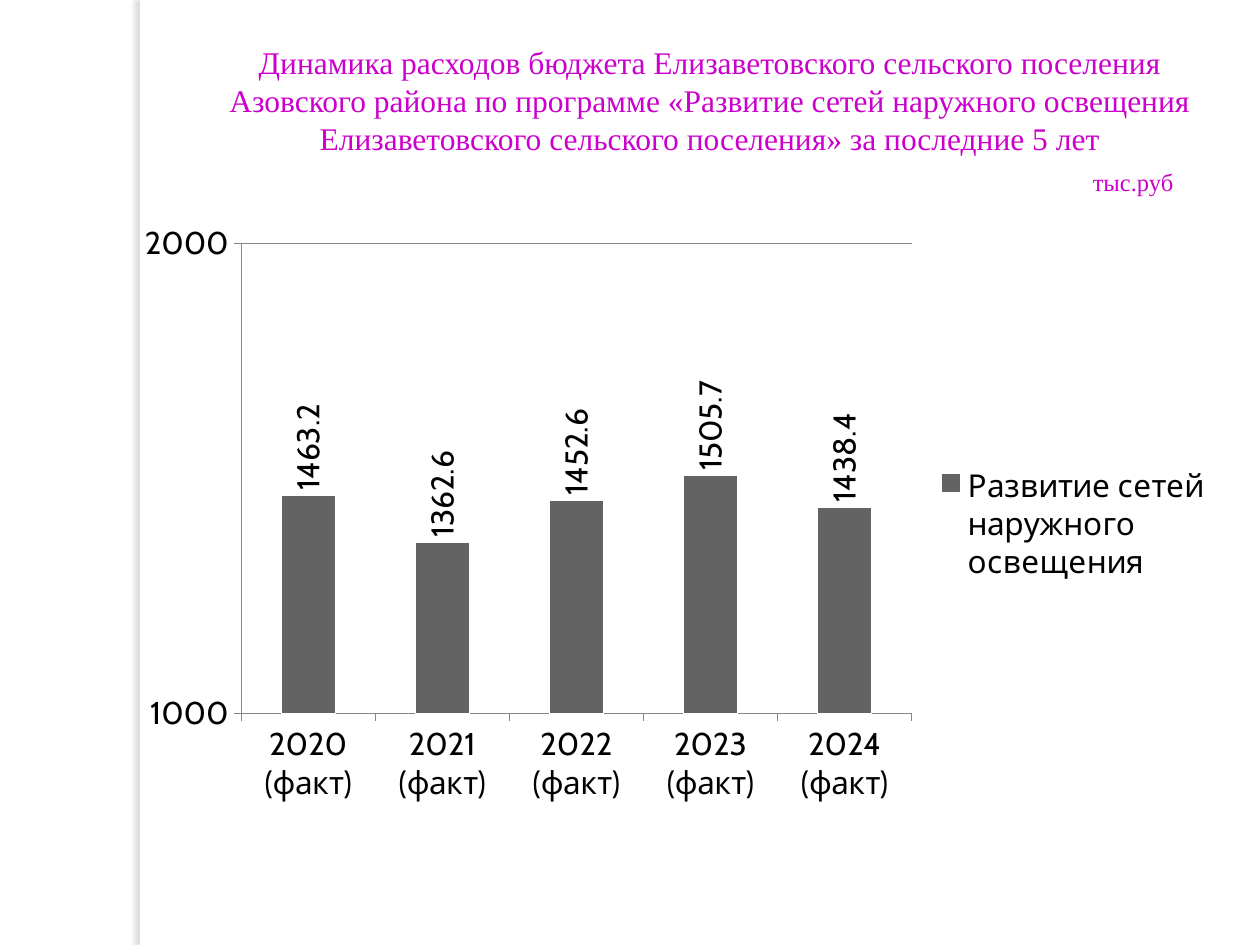
import pptx
import pptx.util
import pptx.chart.data
import pptx.dml.color
import pptx.enum.chart
import pptx.enum.shapes
import pptx.enum.text
import pptx.oxml
import pptx.oxml.ns
from pptx.util import Cm, Pt

MAGENTA = pptx.dml.color.RGBColor(0xCC, 0x00, 0xCC)
WHITE = pptx.dml.color.RGBColor(0xFF, 0xFF, 0xFF)
BLACK = pptx.dml.color.RGBColor(0x00, 0x00, 0x00)
BAR_GRAY = pptx.dml.color.RGBColor(0x63, 0x63, 0x63)
AXIS_GRAY = pptx.dml.color.RGBColor(0x86, 0x86, 0x86)

SHADOW = (
    '<a:effectLst %s><a:outerShdw blurRad="38100" dist="38100" dir="10800000">'
    '<a:srgbClr val="736F63"><a:alpha val="25000"/></a:srgbClr>'
    "</a:outerShdw></a:effectLst>" % pptx.oxml.ns.nsdecls("a")
)


def add_side_strip(s, left, top, width, height):
    """White strip that casts a soft shadow to the left."""
    sp = s.shapes.add_shape(
        pptx.enum.shapes.MSO_SHAPE.RECTANGLE, left, top, width, height)
    sp.fill.solid()
    sp.fill.fore_color.rgb = WHITE
    sp.line.fill.background()
    sp._element.spPr.append(pptx.oxml.parse_xml(SHADOW))


def add_title(s, left, top, width, height):
    """Centred title with the unit of measure at the right below it."""
    sp = s.shapes.title
    sp.left, sp.top, sp.width, sp.height = left, top, width, height
    tf = sp.text_frame
    tf.word_wrap = True
    tf.auto_size = pptx.enum.text.MSO_AUTO_SIZE.NONE
    tf.vertical_anchor = pptx.enum.text.MSO_ANCHOR.TOP
    tf.text = ("Динамика расходов бюджета Елизаветовского сельского поселения "
               "Азовского района по программе «Развитие сетей наружного освещения "
               "Елизаветовского сельского поселения» за последние 5 лет")
    unit = tf.add_paragraph()
    unit.text = "тыс.руб"
    unit.space_before = Pt(6)
    unit._p.get_or_add_pPr().set("marR", str(Cm(0.8)))
    align = pptx.enum.text.PP_ALIGN
    for p, size, side in ((tf.paragraphs[0], 18, align.CENTER),
                          (unit, 14, align.RIGHT)):
        p.alignment = side
        font = p.runs[0].font
        font.name, font.size = "Times New Roman", Pt(size)
        font.color.rgb = MAGENTA


def set_layout(parent, **values):
    """Give the plot area a fixed place, in fractions of the chart."""
    for old in parent.findall(pptx.oxml.ns.qn("c:layout")):
        parent.remove(old)
    parts = "".join('<c:%s val="%s"/>' % item for item in values.items())
    parent.insert(0, pptx.oxml.parse_xml(
        "<c:layout %s><c:manualLayout>%s</c:manualLayout></c:layout>"
        % (pptx.oxml.ns.nsdecls("c"), parts)))


def add_expense_chart(s, left, top, width, height):
    """Column chart of lighting expenses by year."""
    data = pptx.chart.data.CategoryChartData()
    data.categories = ["%d (факт)" % year for year in range(2020, 2025)]
    data.add_series("Развитие сетей наружного освещения",
                    (1463.2, 1362.6, 1452.6, 1505.7, 1438.4))
    chart = s.shapes.add_chart(
        pptx.enum.chart.XL_CHART_TYPE.COLUMN_CLUSTERED,
        left, top, width, height, data).chart
    chart.has_title = False
    chart.font.name, chart.font.size = "Cabin", Pt(18)
    chart.font.color.rgb = BLACK
    set_layout(chart._chartSpace.chart.plotArea, layoutTarget="inner",
               xMode="edge", yMode="edge", x=0.09, y=0.04, w=0.62, h=0.77)

    # Axes
    value_axis = chart.value_axis
    value_axis.minimum_scale, value_axis.maximum_scale = 1000, 2000
    value_axis.major_unit = 1000
    value_axis.has_major_gridlines = True
    chart.category_axis.tick_label_position = (
        pptx.enum.chart.XL_TICK_LABEL_POSITION.LOW)
    for axis in (value_axis, chart.category_axis):
        axis.major_tick_mark = pptx.enum.chart.XL_TICK_MARK.OUTSIDE
        axis.format.line.color.rgb = AXIS_GRAY
    value_axis.major_gridlines.format.line.color.rgb = AXIS_GRAY

    # Columns
    plot = chart.plots[0]
    plot.gap_width = 150
    plot.vary_by_categories = False
    series = plot.series[0]
    series.format.fill.solid()
    series.format.fill.fore_color.rgb = BAR_GRAY
    series.format.line.color.rgb = WHITE

    # Values, turned to read upwards
    labels = series.data_labels
    labels.show_value = True
    labels.number_format, labels.number_format_is_linked = "0.0", False
    labels.position = pptx.enum.chart.XL_LABEL_POSITION.OUTSIDE_END
    labels.font.size = Pt(18)
    body = labels._element.find(
        pptx.oxml.ns.qn("c:txPr")).find(pptx.oxml.ns.qn("a:bodyPr"))
    body.set("rot", "-5400000")
    body.set("vert", "horz")

    # Legend
    chart.has_legend = True
    chart.legend.position = pptx.enum.chart.XL_LEGEND_POSITION.RIGHT
    chart.legend.include_in_layout = False


def main():
    prs = pptx.Presentation()
    prs.slide_width, prs.slide_height = Cm(25.4), Cm(19.05)
    s = prs.slides.add_slide(prs.slide_layouts[5])
    add_side_strip(s, Cm(2.82), 0, Cm(0.2), prs.slide_height)
    add_title(s, Cm(3.91), Cm(0.74), Cm(20.8), Cm(3.43))
    add_expense_chart(s, Cm(2.9), Cm(4.42), Cm(21.8), Cm(12.3))
    prs.save("out.pptx")


if __name__ == "__main__":
    main()
